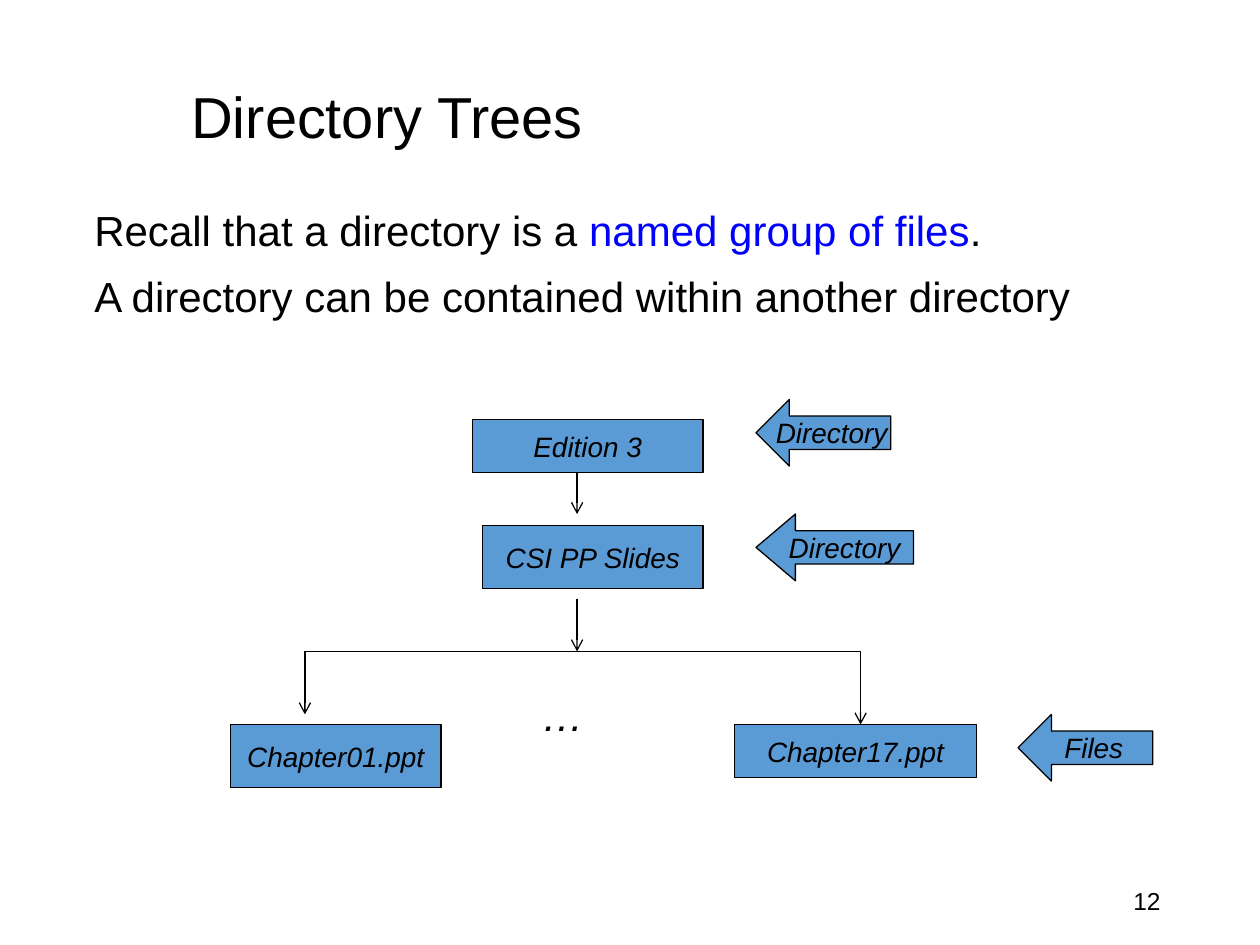
from dataclasses import dataclass

from lxml import etree
from pptx import Presentation
from pptx import util as u
from pptx.dml.color import RGBColor
from pptx.enum import shapes, text
from pptx.oxml.ns import qn

Inches, Pt = u.Inches, u.Pt


@dataclass(frozen=True)
class Theme:
    font: str = "Arial"
    ink: str = "000000"
    accent: str = "0000FF"
    box_fill: str = "5B9BD5"
    title_size: float = 33
    body_size: float = 24
    label_size: float = 16
    number_size: float = 14
    line_width: float = 0.75
    line_spacing: float = 0.9


class SlideBuilder:
    def __init__(self, slide, theme):
        self.slide = slide
        self.theme = theme

    def style_run(self, run, size, color=None, italic=False):
        run.font.name = self.theme.font
        run.font.size = Pt(size)
        run.font.italic = italic
        run.font.color.rgb = RGBColor.from_string(color or self.theme.ink)

    def text_box(self, box, paragraphs, size, anchor=text.MSO_ANCHOR.TOP,
                 align=text.PP_ALIGN.LEFT, spacing=None, gap=0, italic=False):
        """Each paragraph is a list of (words, color) pairs."""
        shape = self.slide.shapes.add_textbox(*map(Inches, box))
        frame = shape.text_frame
        frame.word_wrap = True
        frame.vertical_anchor = anchor
        for index, pieces in enumerate(paragraphs):
            paragraph = frame.add_paragraph() if index else frame.paragraphs[0]
            paragraph.alignment = align
            if spacing:
                paragraph.line_spacing = spacing
            if index:
                paragraph.space_before = Pt(gap)
            for words, color in pieces:
                run = paragraph.add_run()
                run.text = words
                self.style_run(run, size, color, italic)
        return shape

    def label_shape(self, kind, box, label):
        theme = self.theme
        shape = self.slide.shapes.add_shape(kind, *map(Inches, box))
        shape.shadow.inherit = False
        shape.fill.solid()
        shape.fill.fore_color.rgb = RGBColor.from_string(theme.box_fill)
        shape.line.color.rgb = RGBColor.from_string(theme.ink)
        shape.line.width = Pt(theme.line_width)
        frame = shape.text_frame
        frame.text = label
        frame.word_wrap = False
        frame.vertical_anchor = text.MSO_ANCHOR.MIDDLE
        paragraph = frame.paragraphs[0]
        paragraph.alignment = text.PP_ALIGN.CENTER
        self.style_run(paragraph.runs[0], theme.label_size, italic=True)
        return shape

    def node(self, box, label):
        return self.label_shape(shapes.MSO_SHAPE.RECTANGLE, box, label)

    def pointer(self, left, top, width, label, head):
        box = (left, top, width, 0.53)
        shape = self.label_shape(shapes.MSO_SHAPE.LEFT_ARROW, box, label)
        shape.adjustments[1] = head
        return shape

    def line(self, start, end, arrow=True):
        connector = self.slide.shapes.add_connector(
            shapes.MSO_CONNECTOR.STRAIGHT, *map(Inches, start + end))
        connector.line.color.rgb = RGBColor.from_string(self.theme.ink)
        connector.line.width = Pt(self.theme.line_width)
        if arrow:
            outline = connector.line._get_or_add_ln()
            etree.SubElement(outline, qn("a:tailEnd"), type="arrow")
        etree.SubElement(connector._element.spPr, qn("a:effectLst"))
        return connector


def main():
    presentation = Presentation()
    presentation.slide_width, presentation.slide_height = Inches(10), Inches(7.5)
    slide = presentation.slides.add_slide(presentation.slide_layouts[6])
    theme = Theme()
    builder = SlideBuilder(slide, theme)
    middle = text.MSO_ANCHOR.MIDDLE

    # Title, body and slide number
    builder.text_box((1.42, 0.4, 7.9, 1.1), [[("Directory Trees", None)]],
                     theme.title_size, middle, spacing=theme.line_spacing)
    builder.text_box(
        (0.65, 1.62, 8.62, 4.76),
        [[("Recall that a directory is a ", None),
          ("named group of files", theme.accent), (".", None)],
         [("A directory can be contained within another directory", None)]],
        theme.body_size, spacing=theme.line_spacing, gap=11.7)
    builder.text_box((7.06, 6.95, 2.25, 0.4), [[("12", None)]],
                     theme.number_size, middle, text.PP_ALIGN.RIGHT)

    # Directories and files
    for box, label in [
        ((3.75, 3.33, 1.83, 0.42), "Edition 3"),
        ((3.83, 4.17, 1.75, 0.5), "CSI PP Slides"),
        ((1.83, 5.75, 1.67, 0.5), "Chapter01.ppt"),
        ((5.83, 5.75, 1.92, 0.42), "Chapter17.ppt"),
    ]:
        builder.node(box, label)
    ellipsis = builder.text_box((3.92, 5.42, 1.42, 0.5), [[("…", None)]],
                                theme.body_size, italic=True)
    ellipsis.text_frame.margin_left = Inches(0.38)

    # Tree branches
    trunk, left, right, fork = 4.58, 2.42, 6.83, 5.17
    builder.line((left, fork), (right, fork), arrow=False)
    for x, top, bottom in [(trunk, 3.75, 4.08), (trunk, 4.75, fork),
                           (left, fork, 5.67), (right, fork, 5.75)]:
        builder.line((x, top), (x, bottom))

    # Level markers
    builder.pointer(6, 3.17, 1.07, "Directory", 0.5)
    builder.pointer(6, 4.08, 1.25, "Directory", 0.59)
    builder.pointer(8.08, 5.67, 1.07, "Files", 0.5)

    presentation.save("out.pptx")


if __name__ == "__main__":
    main()
